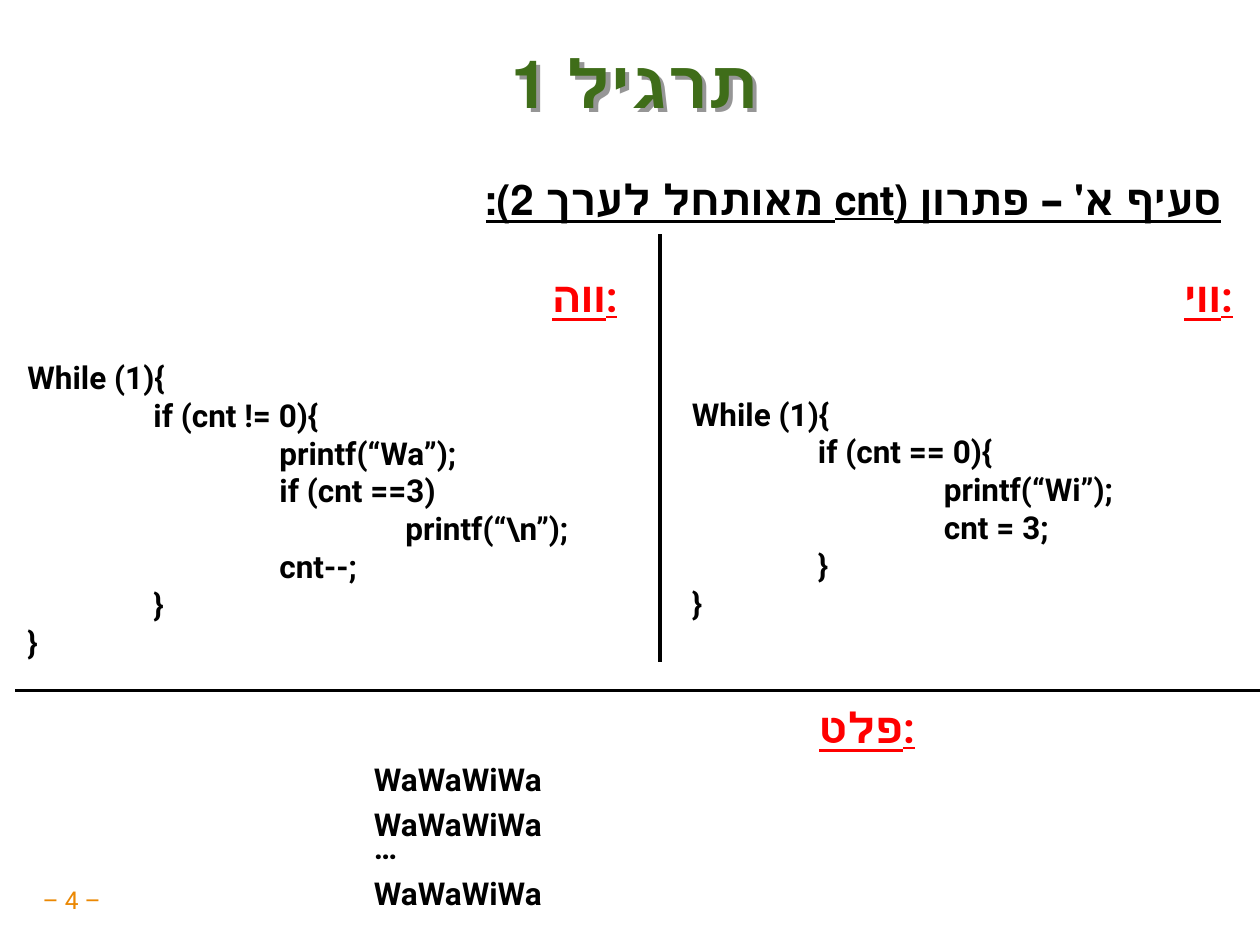
"""Build the exercise solution slide with two code columns and their output."""
from lxml import etree
from pptx import Presentation
from pptx import util as u
from pptx.enum import shapes, text
from pptx.dml.color import RGBColor
from pptx.oxml.ns import qn

HUES = {"black": "000000", "red": "FF0000", "green": "3F6D19",
        "orange": "EB8803", "shade": "969696"}
ALIGN = text.PP_ALIGN
GAP = 21
PITCH = 13
TAB = 72

WA = ["While (1){", "\tif (cnt != 0){", "\t\tprintf(“Wa”);", "\t\tif (cnt ==3)",
      "\t\t\tprintf(“\\n”);", "\t\tcnt--;", "\t}", "}"]
WI = ["While (1){", "\tif (cnt == 0){", "\t\tprintf(“Wi”);", "\t\tcnt = 3;",
      "\t}", "}"]
OUT = [("WaWaWiWa", PITCH), ("WaWaWiWa", PITCH), ("…", 0), ("WaWaWiWa", PITCH)]


def add_box(slide, left, top, width, height, inset=None, middle=False, wrap=True):
    """Add a text box and return it."""
    box = slide.shapes.add_textbox(*map(u.Pt, (left, top, width, height)))
    frame = box.text_frame
    frame.word_wrap = wrap
    if inset is not None:
        frame.margin_left = frame.margin_right = u.Pt(inset)
        frame.margin_top = frame.margin_bottom = u.Pt(inset)
    if middle:
        frame.vertical_anchor = text.MSO_ANCHOR.MIDDLE
    return box


def add_para(box, words, size, hue="black", align=ALIGN.LEFT, bold=True,
             line=False, space=None, before=0, rtl=False):
    """Fill the first free paragraph of a box and return it."""
    frame = box.text_frame
    para = frame.paragraphs[0]
    if para.runs:
        para = frame.add_paragraph()
    para.text = words
    para.alignment = align
    para.space_before = u.Pt(before)
    if space is not None:
        para.line_spacing = space
    font = para.font
    font.name, font.size = "Roboto", u.Pt(size)
    font.bold, font.underline = bold, line
    font.color.rgb = RGBColor.from_string(HUES[hue])
    if rtl:
        para._p.get_or_add_pPr().set("rtl", "1")
    return para


def add_tabs(para, count):
    """Set evenly spaced tab stops on a paragraph."""
    stops = etree.Element(qn("a:tabLst"))
    for step in range(1, count + 1):
        etree.SubElement(stops, qn("a:tab"), pos=str(u.Pt(TAB * step)), algn="l")
    para._p.pPr.find(qn("a:defRPr")).addprevious(stops)


def add_head(box, words, space=None):
    """Add a red underlined heading at the right."""
    add_para(box, words, 24, "red", ALIGN.RIGHT, line=True, space=space)


def add_code(slide, spot, head, lines, gap):
    """Add a heading with a code listing below it."""
    box = add_box(slide, *spot)
    add_head(box, head)
    for row, words in enumerate(lines):
        para = add_para(box, words, 18, before=0 if row else gap)
        depth = words.count("\t")
        if depth:
            add_tabs(para, depth)


def add_shade(box):
    """Give the text of an unfilled box a shadow."""
    group = etree.SubElement(box._element.spPr, qn("a:effectLst"))
    shade = etree.SubElement(group, qn("a:outerShdw"), dist=str(u.Pt(3.5)),
                             dir="2700000", algn="ctr", rotWithShape="0")
    etree.SubElement(shade, qn("a:srgbClr"), val=HUES["shade"])


def add_rule(slide, *ends):
    """Add a black dividing line."""
    rule = slide.shapes.add_connector(shapes.MSO_CONNECTOR.STRAIGHT, *map(u.Pt, ends))
    rule.line.width = u.Pt(2.25)
    rule.line.color.rgb = RGBColor.from_string(HUES["black"])
    etree.SubElement(rule._element.spPr, qn("a:effectLst"))


def main():
    """Build and save the slide."""
    deck = Presentation()
    deck.slide_width, deck.slide_height = u.Pt(720), u.Pt(540)
    slide = deck.slides.add_slide(deck.slide_layouts[6])

    page = add_box(slide, 17.3, 504, 47.5, 22.3, 3.6, True, False)
    add_para(page, "– 4 –", 14, "orange", ALIGN.CENTER, False, space=0.9)
    title = add_box(slide, 25.6, 19.4, 674, 61.2, 0, True)
    add_para(title, "תרגיל 1", 38, "green", ALIGN.CENTER, space=0.87, rtl=True)
    add_shade(title)
    part = add_box(slide, 31, 81, 674, 44.6)
    add_para(part, "סעיף א' – פתרון (cnt מאותחל לערך 2):", 24,
             align=ALIGN.RIGHT, line=True, space=1.5, rtl=True)

    add_code(slide, (8.6, 151.2, 351.4, 237.6), "ווה:", WA, GAP)
    add_code(slide, (388.3, 151.2, 323.3, 211), "ווי:", WI, 2 * GAP)
    add_rule(slide, 377.3, 134, 377.3, 378)

    prints = add_box(slide, 206.6, 413.3, 323.3, 113)
    add_head(prints, "פלט:", u.Pt(PITCH))
    for words, gap in OUT:
        add_para(prints, words, 18, space=u.Pt(PITCH), before=gap)
    add_rule(slide, 8.6, 394.6, 720, 394.6)
    deck.save("out.pptx")


if __name__ == "__main__":
    main()
